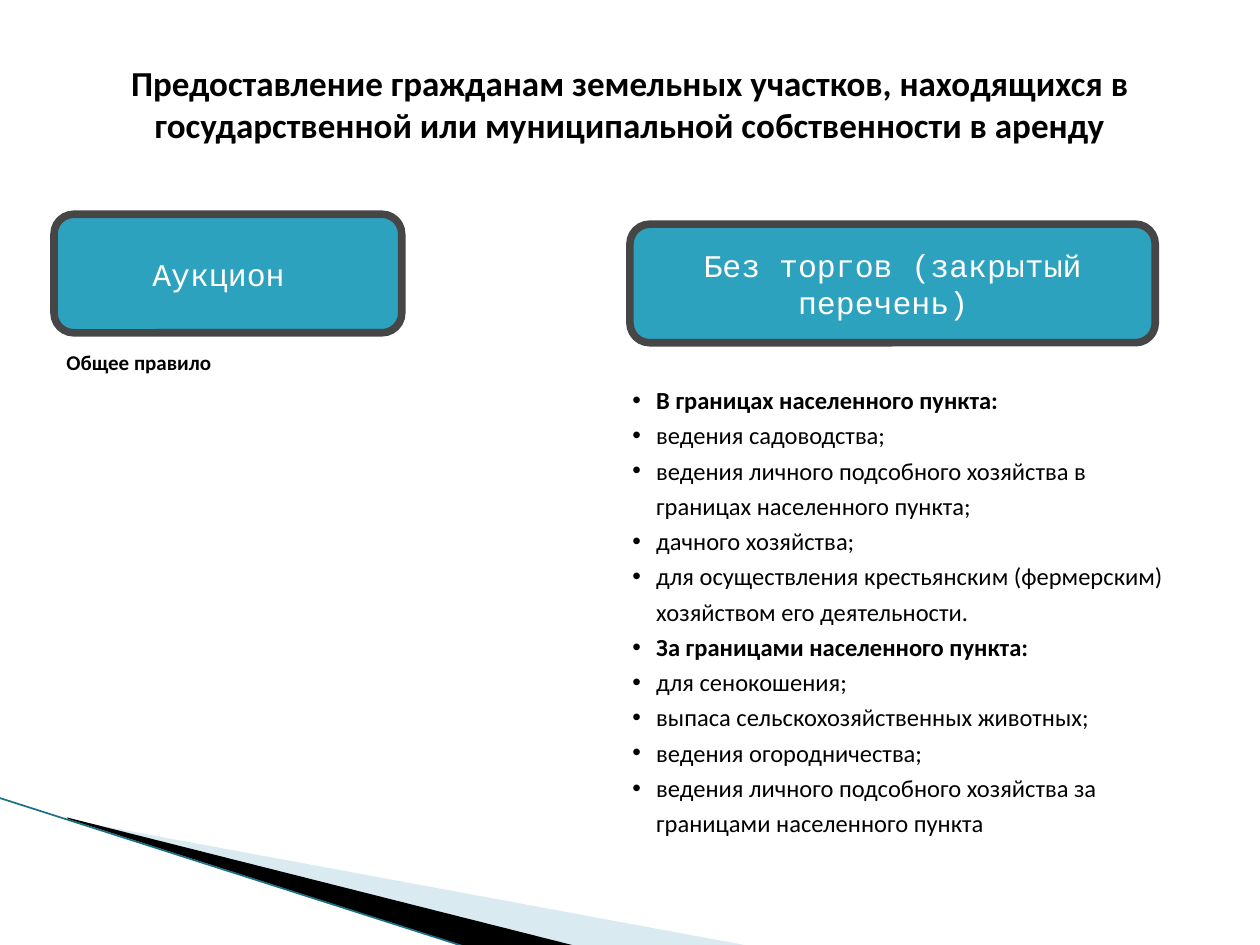
import pptx
import pptx.util
import pptx.dml.color
import pptx.enum.shapes
import pptx.enum.text
import pptx.oxml.ns
import lxml.etree

Cm = pptx.util.Cm
Pt = pptx.util.Pt
RGB = pptx.dml.color.RGBColor.from_string
kinds = pptx.enum.shapes.MSO_SHAPE
aligns = pptx.enum.text.PP_ALIGN
qn = pptx.oxml.ns.qn

hues = {"pale": "A0CBDC", "black": "000000", "edge": "1B6F85",
        "teal": "2DA2BF", "gray": "464646", "white": "FFFFFF"}

deck = pptx.Presentation()
deck.slide_width, deck.slide_height = Cm(25.4), Cm(19.05)
slide = deck.slides.add_slide(deck.slide_layouts[6])
shapes = slide.shapes


def write(para, text, hue, form):
    run = para.add_run()
    run.text = text
    run.font.color.rgb = RGB(hues[hue])
    for key, value in form.items():
        setattr(run.font, key, value)


def box(left, top, width, height):
    frame = shapes.add_textbox(Cm(left), Cm(top), Cm(width), Cm(height)).text_frame
    frame.word_wrap = True
    return frame


# Corner wedges
wedges = [
    ("pale", 40, [(1.4, 16.53), (15.11, 19.07), (11.58, 19.07), (1.4, 16.51)]),
    ("black", 100, [(1.35, 16.48), (11.61, 19.07), (9.45, 19.1), (1.37, 16.51)]),
]
for hue, alpha, spots in wedges:
    spots = [(Cm(x), Cm(y)) for x, y in spots]
    pen = shapes.build_freeform(*spots[0])
    pen.add_line_segments(spots[1:], close=True)
    wedge = pen.convert_to_shape()
    wedge.shadow.inherit = False
    wedge.fill.solid()
    wedge.fill.fore_color.rgb = RGB(hues[hue])
    wedge.line.fill.background()
    if alpha < 100:
        tint = wedge.fill._xPr.find(".//" + qn("a:srgbClr"))
        lxml.etree.SubElement(tint, qn("a:alpha"), val=str(alpha * 1000))

# Corner line
edge = shapes.add_connector(pptx.enum.shapes.MSO_CONNECTOR.STRAIGHT,
                            Cm(-0.03), Cm(16.08), Cm(9.42), Cm(19.1))
edge.line.color.rgb = RGB(hues["edge"])
edge.line.width = Pt(0.95)
lxml.etree.SubElement(edge._element.spPr, qn("a:effectLst"))

# Two ways of leasing
label = {"name": "Courier New", "size": Pt(18)}
cards = [
    (12.7, 4.52, 10.59, "Без торгов (закрытый перечень) "),
    (1.09, 4.32, 7.01, "Аукцион "),
]
for left, top, width, text in cards:
    card = shapes.add_shape(kinds.ROUNDED_RECTANGLE,
                            Cm(left), Cm(top), Cm(width), Cm(2.39))
    card.shadow.inherit = False
    card.fill.solid()
    card.fill.fore_color.rgb = RGB(hues["teal"])
    card.line.color.rgb = RGB(hues["gray"])
    card.line.width = Pt(4.33)
    frame = card.text_frame
    frame.word_wrap = True
    frame.vertical_anchor = pptx.enum.text.MSO_ANCHOR.MIDDLE
    para = frame.paragraphs[0]
    para.alignment = aligns.CENTER
    write(para, text, "white", label)

# Title
para = box(1.09, 1.12, 23.22, 1.96).paragraphs[0]
para.alignment = aligns.CENTER
write(para, "Предоставление гражданам земельных участков, находящихся в "
      "государственной или муниципальной собственности в аренду",
      "black", {"name": "Calibri", "size": Pt(20), "bold": True})

# Note under the auction
para = box(1.09, 6.93, 7.01, 1.88).paragraphs[0]
write(para, "Общее правило", "black",
      {"name": "Calibri", "size": Pt(12), "bold": True})

# Closed list, with headings in bold
items = [
    "В границах населенного пункта:",
    "ведения садоводства;",
    "ведения личного подсобного хозяйства в границах населенного пункта;",
    "дачного хозяйства;",
    "для осуществления крестьянским (фермерским) хозяйством его деятельности.",
    "За границами населенного пункта:",
    "для сенокошения;",
    "выпаса сельскохозяйственных животных;",
    "ведения огородничества;",
    "ведения личного подсобного хозяйства за границами населенного пункта",
]
frame = box(12.5, 7.52, 11.61, 9.6)
for rank, text in enumerate(items):
    para = frame.add_paragraph() if rank else frame.paragraphs[0]
    para.line_spacing = 1.2
    props = para._p.get_or_add_pPr()
    props.set("marL", str(Cm(0.48)))
    props.set("indent", str(Cm(-0.48)))
    lxml.etree.SubElement(props, qn("a:buFont"), typeface="Arial")
    lxml.etree.SubElement(props, qn("a:buChar"), char="•")
    write(para, text, "black",
          {"name": "Calibri", "size": Pt(14), "bold": text.endswith(":")})

deck.save("out.pptx")
